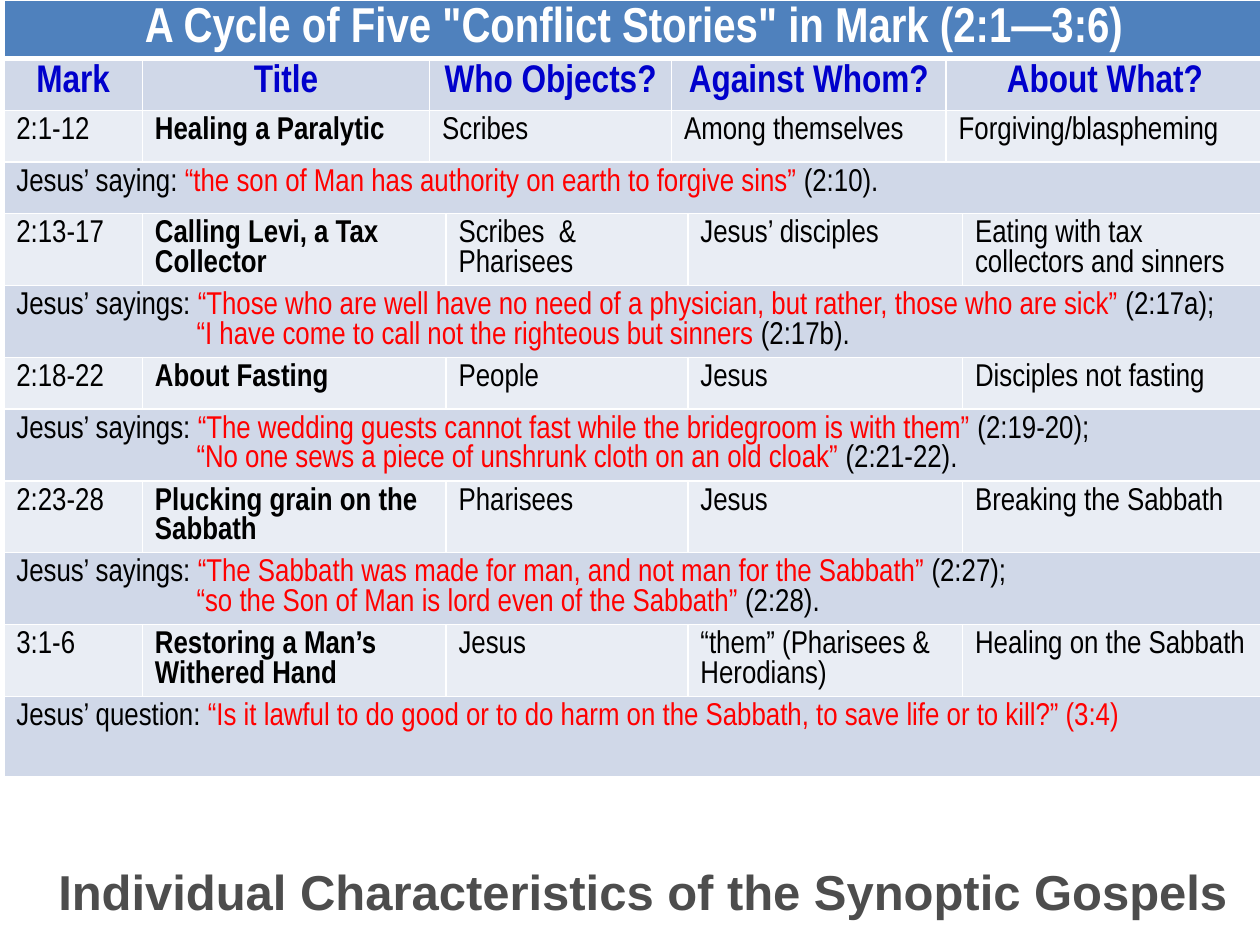
from lxml import etree
from pptx import Presentation
from pptx.dml.color import RGBColor
from pptx.enum.text import MSO_AUTO_SIZE, PP_ALIGN
from pptx.oxml.ns import qn
from pptx.util import Inches, Pt

CENTER, RIGHT = PP_ALIGN.CENTER, PP_ALIGN.RIGHT
FIT_SHAPE = MSO_AUTO_SIZE.SHAPE_TO_FIT_TEXT
COLORS = {
    "title": "4F81BD", "band": "D0D8E8", "light": "E9EDF4", "white": "FFFFFF",
    "heading": "0000CC", "saying": "FF0000", "text": "000000", "footer": "4D4D4D",
}
COLUMN_WIDTHS = [1.1, 2.28, 0.13, 1.79, 0.13, 2.05, 0.13, 2.39]
ONE_LINE, TWO_LINES = 0.41, 0.57
ROW_HEIGHTS = [0.46] + [ONE_LINE] * 3 + [TWO_LINES] * 2 + [ONE_LINE] + [TWO_LINES] * 4 + [0.64]
SAYING_INDENT = 1.43

# First grid column of each cell: whole row, upper rows, lower rows
WHOLE, UPPER, LOWER = [0], [0, 1, 2, 4, 6], [0, 1, 3, 5, 7]

# Each story: starting columns, its cells, and its saying lines (lead, quote, reference)
STORIES = [
    (UPPER, ["2:1-12", "Healing a Paralytic", "Scribes", "Among themselves", "Forgiving/blaspheming"],
     [("Jesus’ saying: ", "“the son of Man has authority on earth to forgive sins” ", "(2:10).")]),
    (LOWER, ["2:13-17", "Calling Levi, a Tax Collector", "Scribes  & Pharisees", "Jesus’ disciples",
             "Eating with tax collectors and sinners"],
     [("Jesus’ sayings: ",
       "“Those who are well have no need of a physician, but rather, those who are sick”", " (2:17a);"),
      ("", "“I have come to call not the righteous but sinners", " (2:17b).")]),
    (LOWER, ["2:18-22", "About Fasting", "People", "Jesus", "Disciples not fasting"],
     [("Jesus’ sayings: ",
       "“The wedding guests cannot fast while the bridegroom is with them”", " (2:19-20);"),
      ("", "“No one sews a piece of unshrunk cloth on an old cloak”", " (2:21-22).")]),
    (LOWER, ["2:23-28", "Plucking grain on the Sabbath", "Pharisees", "Jesus", "Breaking the Sabbath"],
     [("Jesus’ sayings: ", "“The Sabbath was made for man, and not man for the Sabbath”", " (2:27);"),
      ("", "“so the Son of Man is lord even of the Sabbath”", " (2:28).")]),
    (LOWER, ["3:1-6", "Restoring a Man’s Withered Hand", "Jesus", "“them” (Pharisees & Herodians)",
             "Healing on the Sabbath"],
     [("Jesus’ question: ",
       "“Is it lawful to do good or to do harm on the Sabbath, to save life or to kill?” (3:4)", "")]),
]


def format_run(run, size, color, bold=False, font="Arial Narrow"):
    run.font.name = font
    run.font.size = Pt(size)
    run.font.bold = bold
    run.font.color.rgb = RGBColor.from_string(COLORS[color])


def white_line(tag, width):
    line = etree.Element(qn(tag), w=str(Pt(width)))
    fill = etree.SubElement(line, qn("a:solidFill"))
    etree.SubElement(fill, qn("a:srgbClr"), val=COLORS["white"])
    return line


presentation = Presentation()
presentation.slide_width = Inches(10)
presentation.slide_height = Inches(7.5)
slide = presentation.slides.add_slide(presentation.slide_layouts[6])

# Table grid
table = slide.shapes.add_table(
    len(ROW_HEIGHTS), len(COLUMN_WIDTHS), Inches(0.03), 0,
    Inches(sum(COLUMN_WIDTHS)), Inches(sum(ROW_HEIGHTS))).table
for column, width in zip(table.columns, COLUMN_WIDTHS):
    column.width = Inches(width)
for row, height in zip(table.rows, ROW_HEIGHTS):
    row.height = Inches(height)

# Fills, borders and merged cells
row_starts = [WHOLE, UPPER]
for starts, _, _ in STORIES:
    row_starts += [starts, WHOLE]
for row_index, starts in enumerate(row_starts):
    fill_name = "title" if row_index == 0 else "band" if row_index % 2 else "light"
    for cell in table.rows[row_index].cells:
        cell.fill.solid()
        cell.fill.fore_color.rgb = RGBColor.from_string(COLORS[fill_name])
        properties = cell._tc.get_or_add_tcPr()
        for position, side in enumerate(["a:lnL", "a:lnR", "a:lnT", "a:lnB"]):
            thick = (row_index, side) in [(0, "a:lnB"), (1, "a:lnT")]
            properties.insert(position, white_line(side, 3 if thick else 1))
    for start, following in zip(starts, starts[1:] + [len(COLUMN_WIDTHS)]):
        if following - start > 1:
            table.cell(row_index, start).merge(table.cell(row_index, following - 1))

# Title and column headings
headings = ["Mark", "Title", "Who Objects?", "Against Whom?", "About What?"]
heading_cells = [(0, 0, 'A Cycle of Five "Conflict Stories" in Mark (2:1—3:6)', 28, "white")]
heading_cells += [(1, start, text, 22, "heading") for start, text in zip(UPPER, headings)]
for row_index, start, text, size, color in heading_cells:
    paragraph = table.cell(row_index, start).text_frame.paragraphs[0]
    paragraph.text = text
    paragraph.alignment = CENTER
    format_run(paragraph.runs[0], size, color, bold=True)

# Stories, each followed by its sayings
for story_index, (starts, texts, sayings) in enumerate(STORIES):
    story_row = 2 + 2 * story_index
    for position, (start, text) in enumerate(zip(starts, texts)):
        paragraph = table.cell(story_row, start).text_frame.paragraphs[0]
        paragraph.text = text
        format_run(paragraph.runs[0], 18, "text", bold=position == 1)

    text_frame = table.cell(story_row + 1, 0).text_frame
    for line_index, parts in enumerate(sayings):
        paragraph = text_frame.add_paragraph() if line_index else text_frame.paragraphs[0]
        if line_index:
            paragraph._p.get_or_add_pPr().set("marL", str(Inches(SAYING_INDENT)))
        for text, color in zip(parts, ["text", "saying", "text"]):
            if text:
                run = paragraph.add_run()
                run.text = text
                format_run(run, 18, color)

# Footer heading
footer = slide.shapes.add_textbox(Inches(0.17), Inches(6.79), Inches(9.67), Inches(0.57))
footer.text_frame.word_wrap = True
footer.text_frame.auto_size = FIT_SHAPE
paragraph = footer.text_frame.paragraphs[0]
paragraph.text = "Individual Characteristics of the Synoptic Gospels"
paragraph.alignment = RIGHT
format_run(paragraph.runs[0], 28, "footer", bold=True, font="Arial")
paragraph.runs[0].font._element.insert(0, white_line("a:ln", 0.75))

presentation.save("out.pptx")
